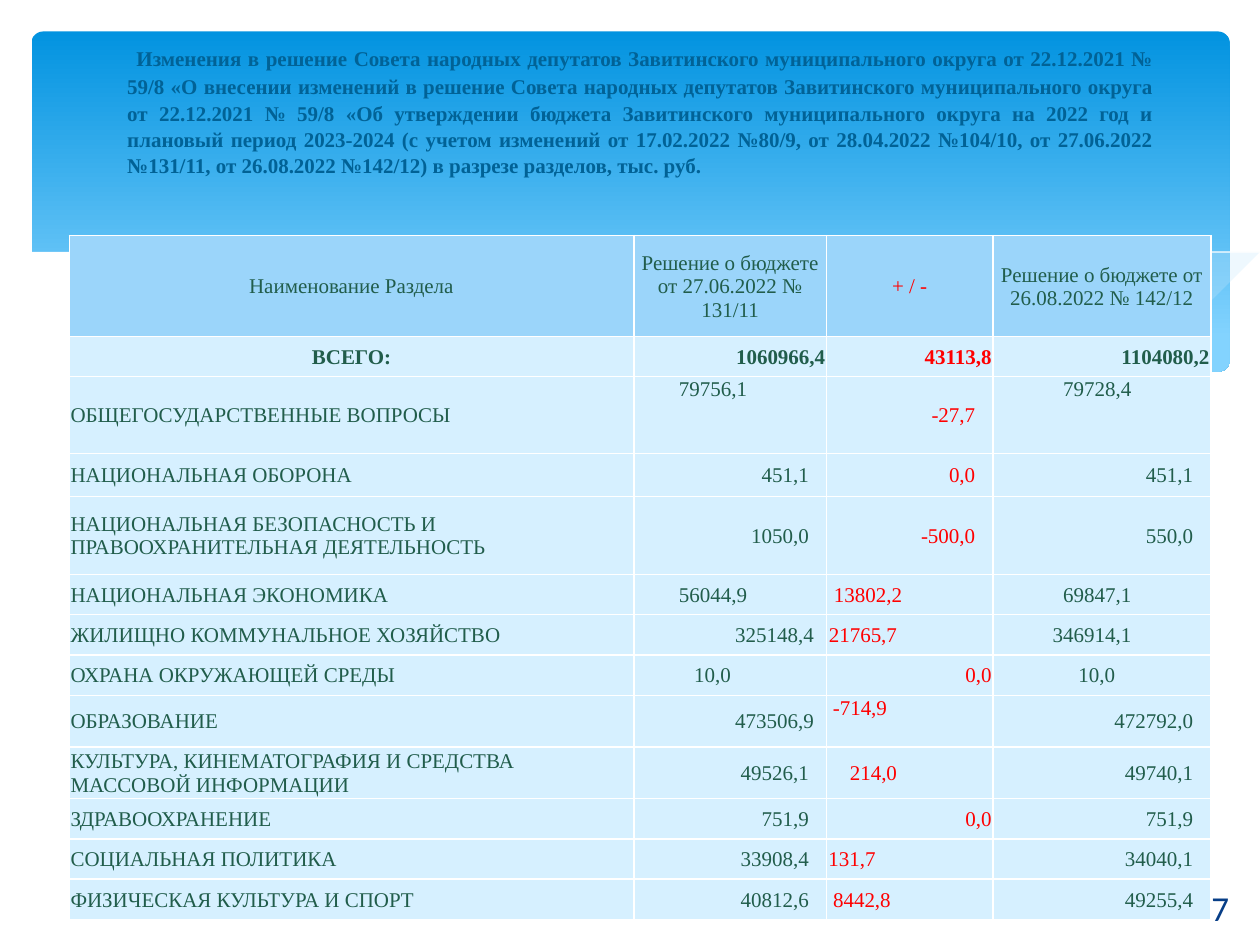
from lxml.etree import SubElement
from pptx import Presentation
from pptx.dml.color import RGBColor
from pptx.enum.shapes import MSO_SHAPE
from pptx.enum.text import MSO_ANCHOR, MSO_AUTO_SIZE, PP_ALIGN
from pptx.oxml import parse_xml
from pptx.oxml.ns import nsdecls, qn
from pptx.util import Inches, Pt

WHITE = RGBColor(0xFF, 0xFF, 0xFF)
DEEP = RGBColor(0x02, 0x93, 0xE0)
SKY = RGBColor(0x83, 0xD3, 0xFE)
MIST = RGBColor(0xC6, 0xE7, 0xFC)
TITLE = RGBColor(0x01, 0x62, 0x96)
NAVY = RGBColor(0x07, 0x3E, 0x87)
GREEN = RGBColor(0x21, 0x5D, 0x4B)
RED = RGBColor(0xFF, 0x00, 0x00)
HEAD = RGBColor(0x9B, 0xD5, 0xFA)
BODY = RGBColor(0xD6, 0xF0, 0xFF)
SERIF = "Times New Roman"

HEADING = (
    "Изменения в решение Совета народных депутатов Завитинского муниципального округа "
    "от 22.12.2021 № 59/8 «О внесении изменений в решение Совета народных депутатов "
    "Завитинского муниципального округа от 22.12.2021 № 59/8 «Об утверждении бюджета "
    "Завитинского муниципального округа на 2022 год и плановый период 2023-2024 "
    "(с учетом изменений от 17.02.2022 №80/9, от 28.04.2022 №104/10, от 27.06.2022 "
    "№131/11, от 26.08.2022 №142/12) в разрезе разделов, тыс. руб."
)

RIGHT_SWELL = [
    (9.76, 2), (9.48, 2.04), (9.06, 2.13), (8.61, 2.23), (8.05, 2.37), (7.53, 2.48),
    (7.06, 2.57), (6.61, 2.65), (7.05, 2.71), (7.45, 2.75), (8.03, 2.78), (8.44, 2.77),
    (8.81, 2.73), (9.13, 2.67), (9.42, 2.59), (9.76, 2.47),
]
LONG_SWELL = [
    (8.93, 2.73), (8.37, 2.65), (7.75, 2.54), (7.06, 2.4), (6.29, 2.22), (5.84, 2.11),
    (5.41, 2.03), (5.02, 1.96), (4.65, 1.91), (4.2, 1.87), (3.8, 1.85), (3.44, 1.86),
    (2.86, 1.91), (3.42, 1.99), (4.04, 2.11), (4.91, 2.32), (5.66, 2.48), (6.34, 2.61),
    (6.95, 2.7), (7.48, 2.76), (8.07, 2.78), (8.57, 2.77),
]
LONG_CREST = [
    (3.09, 1.95), (3.44, 1.9), (3.87, 1.87), (4.33, 1.87), (4.89, 1.9), (5.33, 1.94),
    (5.82, 2), (6.36, 2.08), (6.95, 2.19), (7.6, 2.33), (8.31, 2.51), (9.07, 2.72),
]
RIGHT_CREST = [
    (6.13, 2.57), (6.72, 2.41), (7.48, 2.23), (8.06, 2.1), (8.66, 1.99), (9.1, 1.92),
    (9.51, 1.87), (9.75, 1.85),
]
FRONT_WAVE = [
    (9.77, 2.46), (9.5, 2.56), (9.2, 2.65), (8.87, 2.71), (8.5, 2.75), (8.09, 2.77),
    (7.61, 2.75), (7.08, 2.7), (6.48, 2.62), (5.79, 2.5), (5.03, 2.33), (4.47, 2.2),
    (3.91, 2.07), (3.4, 1.97), (2.92, 1.9), (2.5, 1.86), (2.11, 1.84), (1.77, 1.84),
    (1.46, 1.85), (1.19, 1.87), (0.95, 1.91), (0.76, 1.95), (0.52, 2.01), (0.36, 2.07),
    (0.23, 2.13), (0.23, 3.29), (9.77, 3.29),
]

WIDTHS = [4.48, 1.53, 1.32, 1.73]
LABELS = ["Наименование Раздела", "Решение о бюджете от 27.06.2022 № 131/11", "+ / -",
          "Решение о бюджете от 26.08.2022 № 142/12"]
TOTAL = ["ВСЕГО:", "1060966,4", "43113,8", "1104080,2"]
# name, row height, values, right insets
ROWS = [
    ("ОБЩЕГОСУДАРСТВЕННЫЕ ВОПРОСЫ", 0.61, ("79756,1", "-27,7", "79728,4"), (0.63, 0.14, 0.63)),
    ("НАЦИОНАЛЬНАЯ ОБОРОНА", 0.34, ("451,1", "0,0", "451,1"), (0.14, 0.14, 0.14)),
    ("НАЦИОНАЛЬНАЯ БЕЗОПАСНОСТЬ И ПРАВООХРАНИТЕЛЬНАЯ ДЕЯТЕЛЬНОСТЬ", 0.62,
     ("1050,0", "-500,0", "550,0"), (0.14, 0.14, 0.14)),
    ("НАЦИОНАЛЬНАЯ ЭКОНОМИКА", 0.32, ("56044,9", "13802,2", "69847,1"), (0.63, 0.72, 0.63)),
    ("ЖИЛИЩНО КОММУНАЛЬНОЕ ХОЗЯЙСТВО", 0.32, ("325148,4", "21765,7", "346914,1"),
     (0.1, 0.76, 0.63)),
    ("ОХРАНА ОКРУЖАЮЩЕЙ СРЕДЫ", 0.32, ("10,0", "0,0", "10,0"), (0.76, 0.01, 0.76)),
    ("ОБРАЗОВАНИЕ", 0.41, ("473506,9", "-714,9", "472792,0"), (0.1, 0.84, 0.14)),
    ("КУЛЬТУРА, КИНЕМАТОГРАФИЯ И СРЕДСТВА МАССОВОЙ ИНФОРМАЦИИ", 0.41,
     ("49526,1", "214,0", "49740,1"), (0.14, 0.76, 0.14)),
    ("ЗДРАВООХРАНЕНИЕ", 0.32, ("751,9", "0,0", "751,9"), (0.14, 0.01, 0.14)),
    ("СОЦИАЛЬНАЯ ПОЛИТИКА", 0.32, ("33908,4", "131,7", "34040,1"), (0.14, 0.93, 0.14)),
    ("ФИЗИЧЕСКАЯ КУЛЬТУРА И СПОРТ", 0.32, ("40812,6", "8442,8", "49255,4"),
     (0.14, 0.81, 0.14)),
]
RAISED = {"79756,1", "79728,4", "-714,9"}


def style(para, size, color, font=SERIF, bold=False, align=PP_ALIGN.LEFT):
    """Format a whole paragraph."""
    para.alignment = align
    para.font.size, para.font.name, para.font.bold = Pt(size), font, bold
    para.font.color.rgb = color


def add_panel(slide):
    """Draw the rounded gradient panel."""
    panel = slide.shapes.add_shape(MSO_SHAPE.ROUNDED_RECTANGLE, Inches(0.25), Inches(0.25),
                                   Inches(9.51), Inches(2.7))
    panel.adjustments[0] = 0.034
    panel.shadow.inherit = False
    panel.line.fill.background()
    panel.fill.gradient()
    panel.fill.gradient_angle = 270
    for stop, color, place in zip(panel.fill.gradient_stops, (DEEP, SKY), (0, 0.9)):
        stop.color.rgb, stop.position = color, place


def add_wave(slide, points, fill=None, alpha=100):
    """Draw a filled wave, or a thin white crest when no fill is given."""
    pen = slide.shapes.build_freeform(*points[0], scale=Inches(1))
    pen.add_line_segments(points[1:], close=fill is not None)
    wave = pen.convert_to_shape()
    wave.shadow.inherit = False
    if fill is None:
        wave.fill.background()
        wave.line.color.rgb, wave.line.width = WHITE, Pt(0)
        return
    wave.line.fill.background()
    wave.fill.solid()
    wave.fill.fore_color.rgb = fill
    if alpha < 100:
        tint = wave._element.spPr.find(qn("a:solidFill"))[0]
        SubElement(tint, qn("a:alpha")).set("val", str(alpha * 1000))


def add_title(slide):
    """Fill the title and bring it in front of the panel."""
    title = slide.shapes.title
    title.left, title.top, title.width, title.height = map(Inches, (0.91, 0.21, 8.35, 1.21))
    frame = title.text_frame
    frame.auto_size, frame.vertical_anchor = MSO_AUTO_SIZE.NONE, MSO_ANCHOR.TOP
    para = frame.paragraphs[0]
    style(para, 12, TITLE, bold=True, align=PP_ALIGN.JUSTIFY)
    para.line_spacing = 1.05
    for text, size in ((" ", 18), (HEADING, 12)):
        run = para.add_run()
        run.text, run.font.size = text, Pt(size)
    slide.shapes._spTree.append(title._element)


def add_number(slide):
    """Put the page number in the corner."""
    box = slide.shapes.add_textbox(Inches(9.37), Inches(6.9), Inches(0.63), Inches(0.6))
    frame = box.text_frame
    frame.word_wrap, frame.vertical_anchor = True, MSO_ANCHOR.MIDDLE
    frame.text = "7"
    style(frame.paragraphs[0], 20, NAVY, "Calibri", align=PP_ALIGN.CENTER)


def set_cell(cell, text, fill, color, align, bold=False, inset=0.01):
    """Write one cell with its fill, margins and white borders."""
    cell.text = text
    cell.vertical_anchor = MSO_ANCHOR.TOP if text in RAISED else MSO_ANCHOR.MIDDLE
    cell.margin_left = cell.margin_top = Inches(0.01)
    cell.margin_right, cell.margin_bottom = Inches(inset), 0
    style(cell.text_frame.paragraphs[0], 12, color, bold=bold, align=align)
    cell.fill.solid()
    cell.fill.fore_color.rgb = fill
    for spot, side in enumerate("LRTB"):
        cell._tc.tcPr.insert(spot, parse_xml(
            f'<a:ln{side} {nsdecls("a")} w="12700"><a:solidFill>'
            f'<a:srgbClr val="{WHITE}"/></a:solidFill></a:ln{side}>'))


def add_budget(slide):
    """Build the table of budget sections."""
    heights = [0.8, 0.32] + [row[1] for row in ROWS]
    table = slide.shapes.add_table(len(heights), len(WIDTHS), Inches(0.55), Inches(1.87),
                                   Inches(sum(WIDTHS)), Inches(sum(heights))).table
    for col, width in zip(table.columns, WIDTHS):
        col.width = Inches(width)
    for row, height in zip(table.rows, heights):
        row.height = Inches(height)
    tones = (GREEN, GREEN, RED, GREEN)
    for col, tone in enumerate(tones):
        side = PP_ALIGN.RIGHT if col else PP_ALIGN.CENTER
        set_cell(table.cell(0, col), LABELS[col], HEAD, tone, PP_ALIGN.CENTER)
        set_cell(table.cell(1, col), TOTAL[col], BODY, tone, side, bold=True)
    for line, (name, _, values, insets) in enumerate(ROWS, 2):
        set_cell(table.cell(line, 0), name, BODY, GREEN, PP_ALIGN.LEFT)
        for col, (value, inset) in enumerate(zip(values, insets), 1):
            set_cell(table.cell(line, col), value, BODY, tones[col], PP_ALIGN.RIGHT, inset=inset)


def main():
    """Build the slide and save it."""
    deck = Presentation()
    deck.slide_width, deck.slide_height = Inches(10), Inches(7.5)
    slide = deck.slides.add_slide(deck.slide_layouts[5])
    add_panel(slide)
    add_wave(slide, RIGHT_SWELL, MIST, 29)
    add_wave(slide, LONG_SWELL, MIST, 40)
    add_wave(slide, LONG_CREST)
    add_wave(slide, RIGHT_CREST)
    add_wave(slide, FRONT_WAVE, WHITE)
    add_title(slide)
    add_number(slide)
    add_budget(slide)
    deck.save("out.pptx")


if __name__ == "__main__":
    main()
